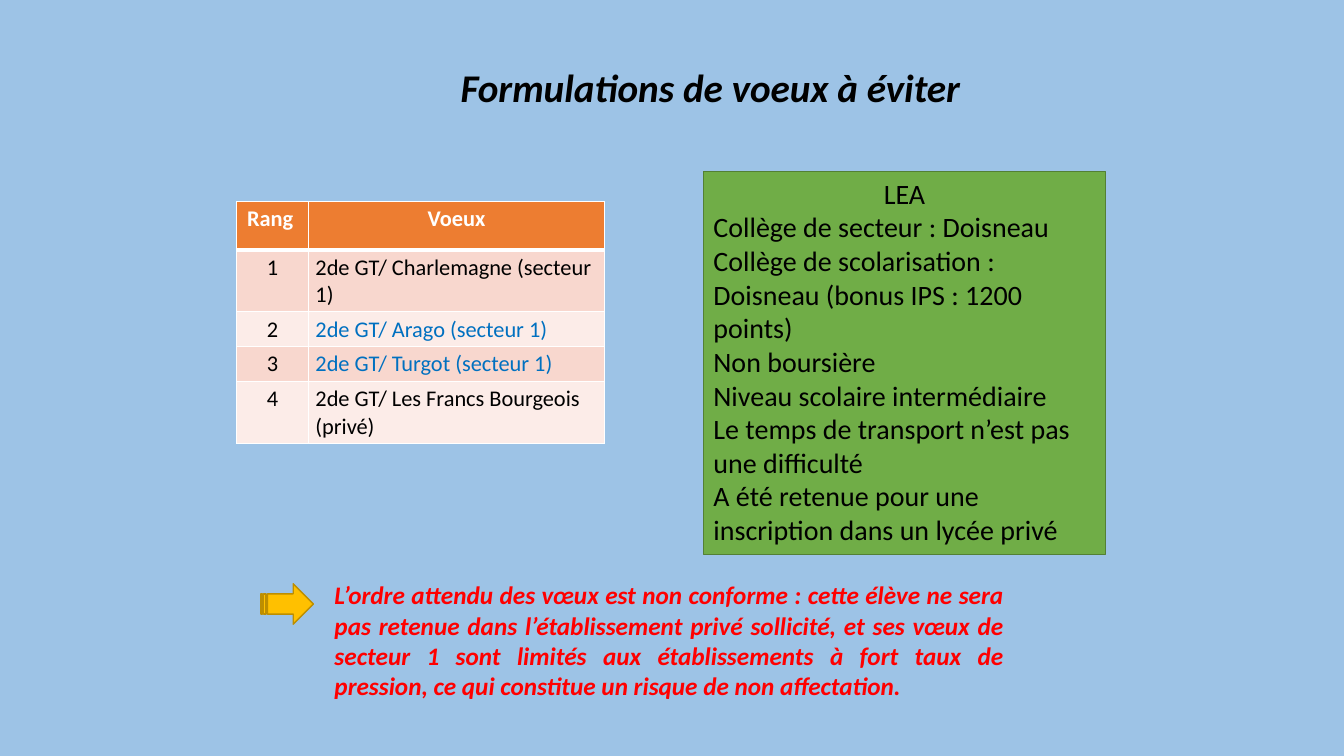
from dataclasses import dataclass

from lxml.etree import SubElement
from pptx import Presentation
from pptx.dml.color import RGBColor
from pptx.enum.shapes import MSO_SHAPE as Shape
from pptx.enum.text import MSO_ANCHOR as Anchor, PP_ALIGN as Align
from pptx.oxml.ns import qn
from pptx.util import Cm, Pt


@dataclass(frozen=True)
class Theme:
    font: str = "Calibri"
    background: str = "9DC3E6"
    ink: str = "000000"
    white: str = "FFFFFF"
    link_blue: str = "0070C0"
    warning: str = "FF0000"
    profile_fill: str = "70AD47"
    profile_line: str = "538035"
    arrow_fill: str = "FFC000"
    arrow_line: str = "BD8E00"
    header_fill: str = "ED7D31"
    bands: tuple = ("F8D7CE", "FCECE8")
    title_size: int = 28
    profile_size: int = 20
    note_size: int = 18
    table_size: int = 16


class SlideBuilder:
    def __init__(self, slide, theme):
        self.slide = slide
        self.theme = theme
        self.fill(slide.background, theme.background)

    def fill(self, target, color):
        target.fill.solid()
        target.fill.fore_color.rgb = RGBColor.from_string(color)

    def add_span(self, para, text, size, color, align=Align.LEFT, bold=False, italic=False):
        para.alignment = align
        span = para.add_run()
        span.text = text
        font = span.font
        font.name, font.size = self.theme.font, Pt(size)
        font.bold, font.italic = bold, italic
        font.color.rgb = RGBColor.from_string(color)

    def text(self, place, text, size, color, align, anchor=Anchor.TOP, spacing=1.0):
        box = self.slide.shapes.add_textbox(*map(Cm, place))
        frame = box.text_frame
        frame.word_wrap = True
        frame.vertical_anchor = anchor
        para = frame.paragraphs[0]
        para.line_spacing = spacing
        self.add_span(para, text, size, color, align, bold=True, italic=True)

    def shape(self, kind, place, fill, line):
        shape = self.slide.shapes.add_shape(kind, *map(Cm, place))
        shape.shadow.inherit = False
        self.fill(shape, fill)
        shape.line.color.rgb = RGBColor.from_string(line)
        shape.line.width = Pt(1)
        return shape

    def panel(self, place, heading, lines):
        theme = self.theme
        shape = self.shape(Shape.RECTANGLE, place, theme.profile_fill, theme.profile_line)
        frame = shape.text_frame
        frame.word_wrap = True
        frame.vertical_anchor = Anchor.TOP
        self.add_span(frame.paragraphs[0], heading, theme.profile_size, theme.ink, Align.CENTER)
        for line in lines:
            self.add_span(frame.add_paragraph(), line, theme.profile_size, theme.ink)

    def borders(self, cell, bottom):
        properties = cell._tc.get_or_add_tcPr()
        widths = {"a:lnL": 1, "a:lnR": 1, "a:lnT": 1, "a:lnB": bottom}
        for position, (tag, width) in enumerate(widths.items()):
            line = SubElement(properties, qn(tag), w=str(Pt(width)))
            SubElement(SubElement(line, qn("a:solidFill")), qn("a:srgbClr"), val=self.theme.white)
            properties.insert(position, line)

    def table(self, left, top, widths, heights, rows):
        theme = self.theme
        table = self.slide.shapes.add_table(
            len(rows), len(widths), Cm(left), Cm(top), Cm(sum(widths)), Cm(sum(heights))
        ).table
        for column, width in zip(table.columns, widths):
            column.width = Cm(width)
        for index, (height, (rank, wish, color)) in enumerate(zip(heights, rows)):
            table.rows[index].height = Cm(height)
            header = index == 0
            fill = theme.header_fill if header else theme.bands[(index - 1) % 2]
            rank_color = theme.white if header else theme.ink
            wish_align = Align.CENTER if header else Align.LEFT
            entries = ((rank, rank_color, Align.CENTER), (wish, color, wish_align))
            for cell, (text, ink, align) in zip(table.rows[index].cells, entries):
                cell.margin_left = cell.margin_right = Cm(0.18)
                cell.margin_top = cell.margin_bottom = Cm(0.1)
                self.fill(cell, fill)
                self.borders(cell, bottom=3 if header else 1)
                self.add_span(cell.text_frame.paragraphs[0], text, theme.table_size, ink, align, bold=header)


def main():
    deck = Presentation()
    deck.slide_width, deck.slide_height = Cm(33.87), Cm(19.05)
    theme = Theme()
    page = SlideBuilder(deck.slides.add_slide(deck.slide_layouts[6]), theme)

    # Title
    page.text((7.92, 1.42, 19.96, 1.7), "Formulations de voeux à éviter",
              theme.title_size, theme.ink, Align.CENTER, Anchor.MIDDLE, 0.9)

    # Student profile
    page.panel((17.73, 4.32, 10.13, 9.65), "LEA", (
        "Collège de secteur : Doisneau",
        "Collège de scolarisation : Doisneau (bonus IPS : 1200 points)",
        "Non boursière",
        "Niveau scolaire intermédiaire",
        "Le temps de transport n’est pas une difficulté",
        "A été retenue pour une inscription dans un lycée privé",
    ))

    # Ranked wishes
    page.table(5.97, 5.08, (1.8, 7.47), (1.22, 1.55, 0.86, 0.86, 1.55), (
        ("Rang ", "Voeux", theme.white),
        ("1", "2de GT/ Charlemagne (secteur 1)", theme.ink),
        ("2", "2de GT/ Arago (secteur 1)", theme.link_blue),
        ("3", "2de GT/ Turgot (secteur 1)", theme.link_blue),
        ("4", "2de GT/ Les Francs Bourgeois (privé)", theme.ink),
    ))

    # Warning with its arrow
    page.shape(Shape.STRIPED_RIGHT_ARROW, (6.58, 14.71, 1.32, 1.02), theme.arrow_fill, theme.arrow_line)
    page.text(
        (8.18, 14.48, 17.37, 3.33),
        "L’ordre attendu des vœux est non conforme : cette élève ne sera pas retenue "
        "dans l’établissement privé sollicité, et ses vœux de secteur 1 sont limités aux "
        "établissements à fort taux de pression, ce qui constitue un risque de non affectation.",
        theme.note_size, theme.warning, Align.JUSTIFY,
    )

    deck.save("out.pptx")


if __name__ == "__main__":
    main()
